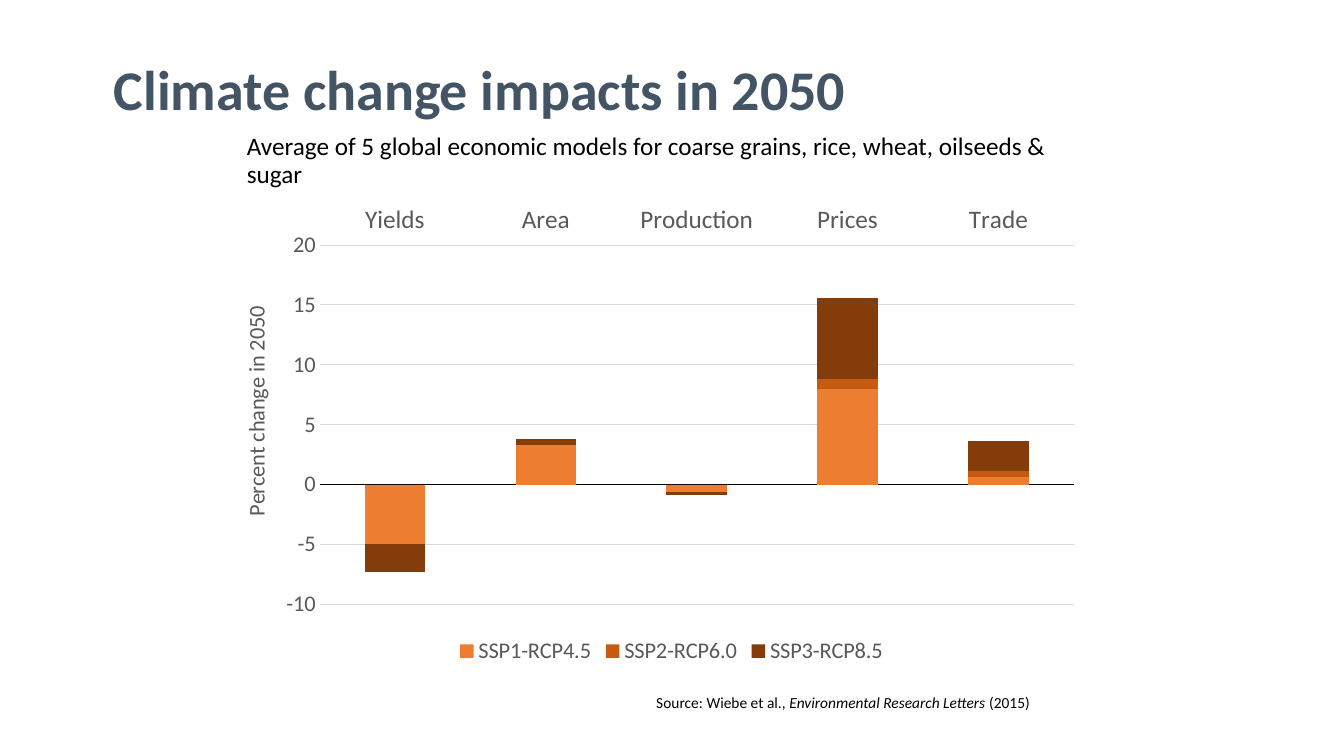
from lxml import etree
from pptx import Presentation
from pptx.chart.data import CategoryChartData
from pptx.dml.color import RGBColor
from pptx.enum.chart import XL_CHART_TYPE, XL_LEGEND_POSITION, XL_TICK_LABEL_POSITION, XL_TICK_MARK
from pptx.enum.text import MSO_ANCHOR
from pptx.oxml.ns import qn
from pptx.util import Inches, Pt

STACKED = XL_CHART_TYPE.COLUMN_STACKED
LEGEND_BOTTOM = XL_LEGEND_POSITION.BOTTOM
LABELS_HIGH = XL_TICK_LABEL_POSITION.HIGH
NO_TICKS = XL_TICK_MARK.NONE
TOP, MIDDLE = MSO_ANCHOR.TOP, MSO_ANCHOR.MIDDLE

FONT = "Calibri"
BLACK = RGBColor(0x00, 0x00, 0x00)
SLATE = RGBColor(0x43, 0x54, 0x64)
GREY = RGBColor(0x59, 0x59, 0x59)
GRID_GREY = RGBColor(0xD9, 0xD9, 0xD9)
ORANGE = RGBColor(0xED, 0x7D, 0x31)
RUST = RGBColor(0xC5, 0x5A, 0x11)
BROWN = RGBColor(0x84, 0x3C, 0x0B)

HEADING_BOX = (1.03, 0.4, 11.78, 0.95)
SUBTITLE_BOX = (2.35, 1.3, 8.7, 0.6)
CHART_BOX = (2.35, 1.88, 8.62, 4.76)
SOURCE_BOX = (6.41, 6.83, 4.22, 0.29)
PLOT_SHARES = {"x": 0.095, "y": 0.116, "w": 0.868, "h": 0.749}

IMPACTS = ["Yields", "Area", "Production", "Prices", "Trade"]
SCENARIOS = [
    ("SSP1-RCP4.5", ORANGE, (-5, 3.3, -0.6, 8, 0.6)),
    ("SSP2-RCP6.0", RUST, (0, 0, 0, 0.8, 0.5)),
    ("SSP3-RCP8.5", BROWN, (-2.3, 0.5, -0.3, 6.8, 2.5)),
]


def style_font(font, size, color, bold=False):
    font.name = FONT
    font.size = Pt(size)
    font.color.rgb = color
    font.bold = bold


def add_text(slide, box, pieces, size, color=BLACK, bold=False, anchor=TOP, spacing=1.0):
    frame = slide.shapes.add_textbox(*map(Inches, box)).text_frame
    frame.word_wrap = True
    frame.vertical_anchor = anchor
    paragraph = frame.paragraphs[0]
    paragraph.line_spacing = spacing
    style_font(paragraph.font, size, color, bold)
    for words, italic in pieces:
        run = paragraph.add_run()
        run.text = words
        if italic:
            run.font.italic = True


def place_plot(chart, shares):
    plot_area = chart._chartSpace.chart.plotArea
    for old_layout in plot_area.findall(qn("c:layout")):
        plot_area.remove(old_layout)
    layout = etree.Element(qn("c:layout"))
    manual = etree.SubElement(layout, qn("c:manualLayout"))
    settings = {"layoutTarget": "inner", "xMode": "edge", "yMode": "edge", **shares}
    for tag, value in settings.items():
        etree.SubElement(manual, qn(f"c:{tag}")).set("val", str(value))
    plot_area.insert(0, layout)


def style_axes(chart):
    impacts, percent = chart.category_axis, chart.value_axis
    for axis, size in ((impacts, 18), (percent, 16)):
        axis.major_tick_mark = axis.minor_tick_mark = NO_TICKS
        style_font(axis.tick_labels.font, size, GREY)
    impacts.tick_label_position = LABELS_HIGH
    impacts.format.line.color.rgb = BLACK
    impacts.format.line.width = Pt(0.75)

    percent.minimum_scale, percent.maximum_scale, percent.major_unit = -10, 20, 5
    percent.format.line.fill.background()
    percent.major_gridlines.format.line.color.rgb = GRID_GREY
    percent.major_gridlines.format.line.width = Pt(0.75)
    percent_title = percent.axis_title.text_frame
    percent_title.text = "Percent change in 2050"
    style_font(percent_title.paragraphs[0].font, 16, GREY)


def add_impact_chart(slide, box):
    data = CategoryChartData()
    data.categories = IMPACTS
    for scenario, _, changes in SCENARIOS:
        data.add_series(scenario, changes)
    chart = slide.shapes.add_chart(STACKED, *map(Inches, box), data).chart
    chart.has_title = False
    style_font(chart.font, 10, BLACK)

    columns = chart.plots[0]
    columns.gap_width, columns.overlap = 150, 100
    columns.vary_by_categories = False
    for series, (_, color, _) in zip(columns.series, SCENARIOS):
        series.invert_if_negative = False
        series.format.fill.solid()
        series.format.fill.fore_color.rgb = color

    style_axes(chart)
    chart.has_legend = True
    chart.legend.position = LEGEND_BOTTOM
    chart.legend.include_in_layout = False
    style_font(chart.legend.font, 16, GREY)
    place_plot(chart, PLOT_SHARES)


def main():
    deck = Presentation()
    deck.slide_width, deck.slide_height = Inches(13.33), Inches(7.5)
    slide = deck.slides.add_slide(deck.slide_layouts[6])
    add_text(slide, SUBTITLE_BOX,
             [("Average of 5 global economic models for coarse grains, rice, wheat, oilseeds & sugar", False)],
             18, anchor=MIDDLE, spacing=0.9)
    add_impact_chart(slide, CHART_BOX)
    add_text(slide, SOURCE_BOX,
             [("Source: Wiebe et al., ", False), ("Environmental Research Letters", True), (" (2015)", False)], 11)
    add_text(slide, HEADING_BOX, [("Climate change impacts in 2050", False)],
             40, SLATE, bold=True, anchor=MIDDLE)
    deck.save("out.pptx")


if __name__ == "__main__":
    main()
